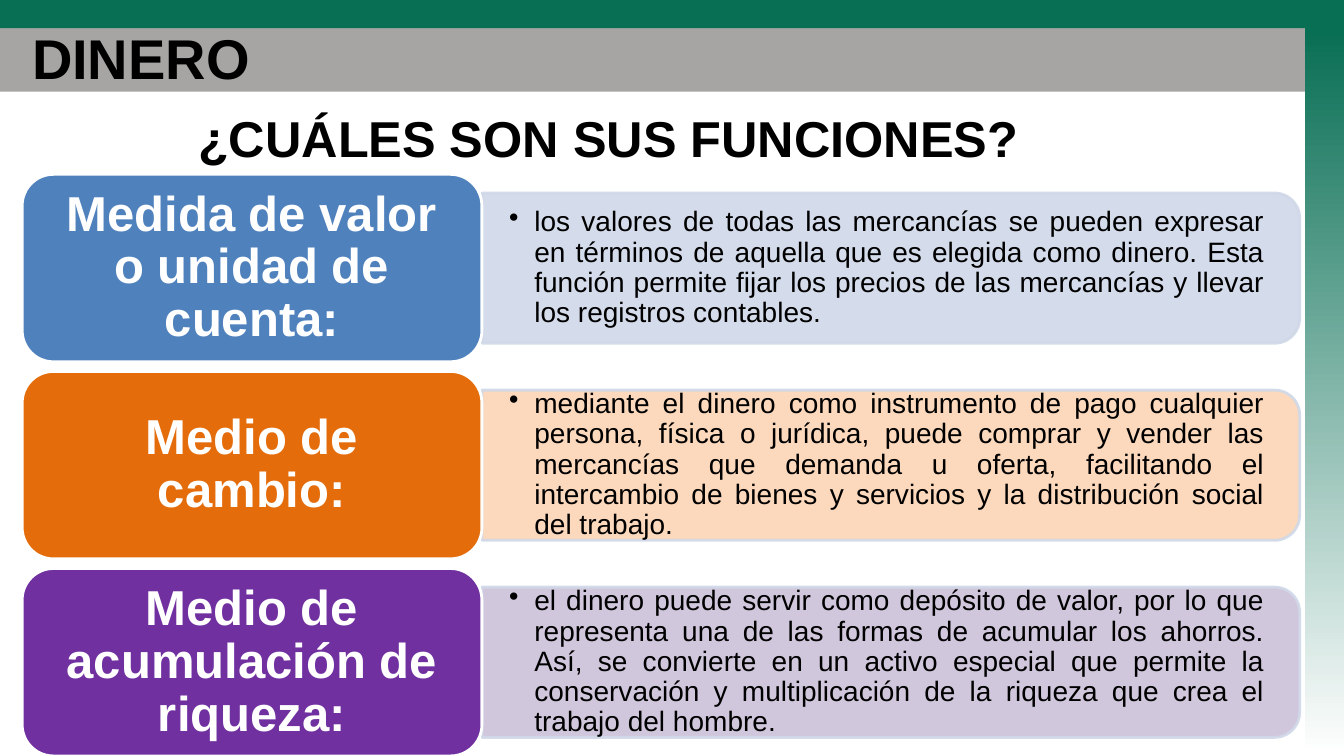
from dataclasses import dataclass

from lxml import etree
from pptx import Presentation
from pptx.dml.color import RGBColor
from pptx.enum import shapes, text
from pptx.oxml import ns
from pptx.util import Inches, Pt

GREEN = RGBColor(0x08, 0x6E, 0x54)
GRAY = RGBColor(0xA6, 0xA5, 0xA4)
WHITE = RGBColor(0xFF, 0xFF, 0xFF)
BLACK = RGBColor(0x00, 0x00, 0x00)
BLUE = RGBColor(0x4F, 0x81, 0xBD)
ORANGE = RGBColor(0xE4, 0x6C, 0x0A)
PURPLE = RGBColor(0x70, 0x30, 0xA0)
PALE_BLUE = RGBColor(0xD0, 0xD8, 0xE8)
PALE_ORANGE = RGBColor(0xFC, 0xD5, 0xB5)
PALE_PURPLE = RGBColor(0xCC, 0xC1, 0xDA)

ROW_TOP, ROW_PITCH = 1.73, 1.955
LABEL_LEFT, LABEL_WIDTH, LABEL_HEIGHT = 0.22, 4.56, 1.86
PANEL_LEFT, PANEL_WIDTH, PANEL_HEIGHT = 4.78, 8.11, 1.49
DETAIL_WIDTH, DETAIL_HEIGHT = 8.03, 1.34


@dataclass
class MoneyFunction:
    label: str
    detail: str
    color: RGBColor
    pale: RGBColor


FUNCTIONS = [
    MoneyFunction(
        "Medida de valor o unidad de cuenta:",
        "los valores de todas las mercancías se pueden expresar en términos de "
        "aquella que es elegida como dinero. Esta función permite fijar los precios "
        "de las mercancías y llevar los registros contables.",
        BLUE, PALE_BLUE),
    MoneyFunction(
        "Medio de cambio:",
        "mediante el dinero como instrumento de pago cualquier persona, física o "
        "jurídica, puede comprar y vender las mercancías que demanda u oferta, "
        "facilitando el intercambio de bienes y servicios y la distribución social "
        "del trabajo.",
        ORANGE, PALE_ORANGE),
    MoneyFunction(
        "Medio de acumulación de riqueza:",
        "el dinero puede servir como depósito de valor, por lo que representa una de "
        "las formas de acumular los ahorros. Así, se convierte en un activo especial "
        "que permite la conservación y multiplicación de la riqueza que crea el "
        "trabajo del hombre.",
        PURPLE, PALE_PURPLE),
]


def add_block(page, kind, left: float, top: float, width: float, height: float,
              fill: RGBColor, line: RGBColor | None = None):
    block = page.shapes.add_shape(
        kind, Inches(left), Inches(top), Inches(width), Inches(height))
    block.shadow.inherit = False
    block.fill.solid()
    block.fill.fore_color.rgb = fill
    if line is None:
        block.line.fill.background()
    else:
        block.line.color.rgb = line
        block.line.width = Pt(2)
    return block


def add_box(page, left: float, top: float, width: float, height: float):
    return page.shapes.add_textbox(
        Inches(left), Inches(top), Inches(width), Inches(height))


def write(box, content: str, *, size: int, color: RGBColor = BLACK,
          bold: bool = False, align=text.PP_ALIGN.LEFT, spacing: float = 1.0,
          inset: tuple[float, float] = (0.1, 0.05), bullet: bool = False) -> None:
    frame = box.text_frame
    frame.word_wrap = True
    frame.vertical_anchor = text.MSO_ANCHOR.MIDDLE
    frame.margin_left = frame.margin_right = Inches(inset[0])
    frame.margin_top = frame.margin_bottom = Inches(inset[1])
    para = frame.paragraphs[0]
    para.alignment = align
    para.line_spacing = spacing
    if bullet:
        properties = para._p.get_or_add_pPr()
        properties.set("marL", str(Inches(0.25)))
        properties.set("indent", str(-Inches(0.25)))
        etree.SubElement(properties, ns.qn("a:buChar")).set("char", "•")
    span = para.add_run()
    span.text = content
    span.font.name = "Arial"
    span.font.size = Pt(size)
    span.font.bold = bold
    span.font.color.rgb = color


def set_opacity(block, percent: int) -> None:
    for color in block._element.spPr.iter(ns.qn("a:srgbClr")):
        etree.SubElement(color, ns.qn("a:alpha")).set("val", str(percent * 1000))


def draw_frame(page) -> None:
    rectangle = shapes.MSO_SHAPE.RECTANGLE
    add_block(page, rectangle, 0, 0.28, 13.33, 0.63, GRAY)
    add_block(page, rectangle, 0, 0, 13.33, 0.28, GREEN)
    side = add_block(page, rectangle, 12.94, 0.28, 0.4, 7.22, GREEN)
    side.fill.gradient()
    side.fill.gradient_angle = 270
    for stop, color in zip(side.fill.gradient_stops, (GREEN, WHITE)):
        stop.color.rgb = color


def draw_function(page, item: MoneyFunction, top: float) -> None:
    middle = top + LABEL_HEIGHT / 2
    panel = add_block(
        page, shapes.MSO_SHAPE.ROUND_2_SAME_RECTANGLE,
        PANEL_LEFT + (PANEL_WIDTH - PANEL_HEIGHT) / 2, middle - PANEL_WIDTH / 2,
        PANEL_HEIGHT, PANEL_WIDTH, item.pale, PALE_BLUE)
    panel.rotation = 90
    set_opacity(panel, 90)
    detail = add_box(page, PANEL_LEFT, middle - DETAIL_HEIGHT / 2,
                     DETAIL_WIDTH, DETAIL_HEIGHT)
    write(detail, item.detail, size=20, align=text.PP_ALIGN.JUSTIFY,
          spacing=0.9, inset=(0.27, 0.14), bullet=True)
    label = add_block(page, shapes.MSO_SHAPE.ROUNDED_RECTANGLE, LABEL_LEFT, top,
                      LABEL_WIDTH, LABEL_HEIGHT, item.color, WHITE)
    write(label, item.label, size=35, color=WHITE, bold=True,
          align=text.PP_ALIGN.CENTER, spacing=0.9, inset=(0.15, 0.07))


def main() -> None:
    deck = Presentation()
    deck.slide_width, deck.slide_height = Inches(13.33), Inches(7.5)
    page = deck.slides.add_slide(deck.slide_layouts[6])
    draw_frame(page)
    for index, item in enumerate(FUNCTIONS):
        draw_function(page, item, ROW_TOP + index * ROW_PITCH)
    write(add_box(page, 0.22, 0.3, 12.67, 0.53), "DINERO", size=40, bold=True)
    write(add_box(page, 0.22, 1, 11.63, 0.73), "¿CUÁLES SON SUS FUNCIONES?",
          size=36, bold=True, align=text.PP_ALIGN.CENTER)
    deck.save("out.pptx")


if __name__ == "__main__":
    main()
